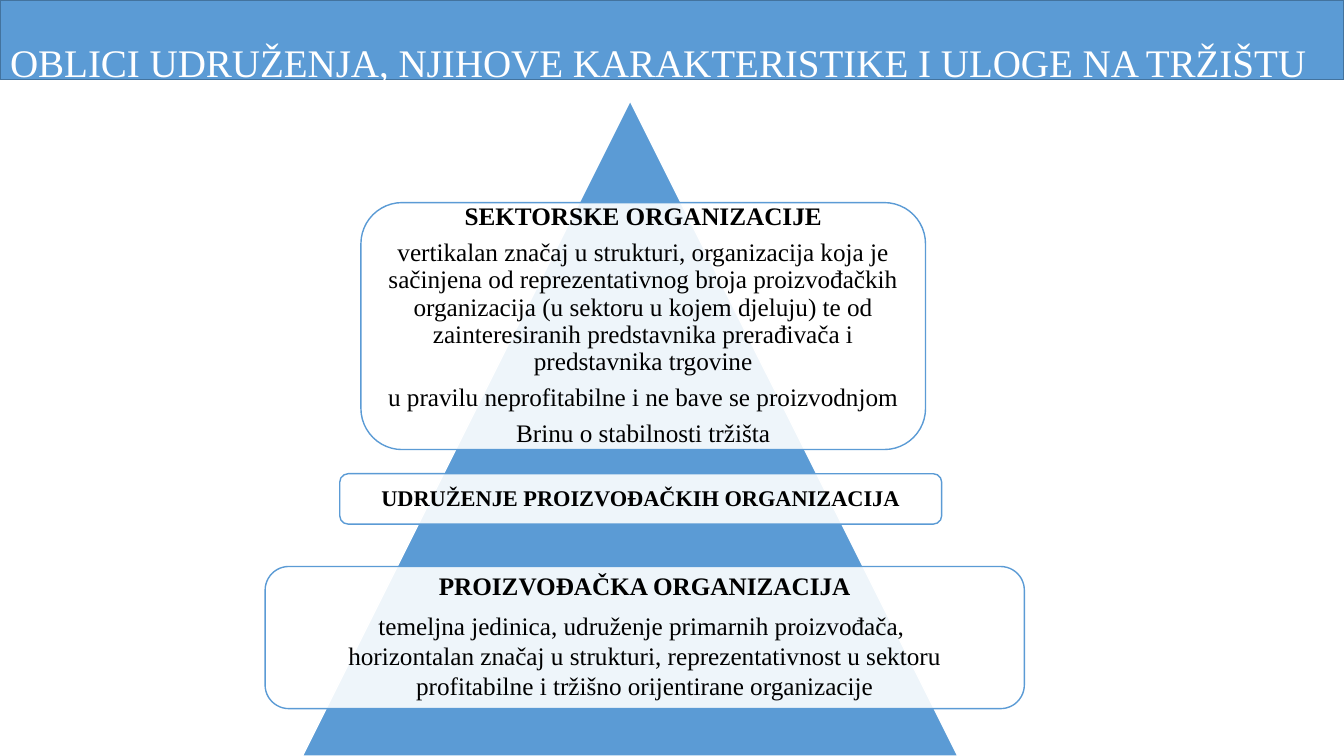
from dataclasses import dataclass

from lxml.etree import SubElement
from pptx import Presentation
from pptx.dml.color import RGBColor
from pptx.enum.shapes import MSO_SHAPE as Kind
from pptx.enum.text import MSO_ANCHOR as Anchor, MSO_AUTO_SIZE as Fit, PP_ALIGN as Align
from pptx.oxml.ns import qn
from pptx.shapes.autoshape import Shape
from pptx.slide import Slide
from pptx.util import Inches, Pt

BLUE = RGBColor(0x5B, 0x9B, 0xD5)
NAVY = RGBColor(0x43, 0x73, 0x9E)
WHITE = RGBColor(0xFF, 0xFF, 0xFF)
BLACK = RGBColor(0, 0, 0)
FONT = "Times New Roman"


@dataclass
class Level:
    left: float
    top: float
    width: float
    height: float
    size: float
    head: str
    body: tuple[str, ...] = ()
    tight: bool = True


LEVELS = (
    Level(3.37, 4.7, 5.97, 0.5, 16, "UDRUŽENJE PROIZVOĐAČKIH ORGANIZACIJA"),
    Level(2.63, 5.62, 7.53, 1.41, 18, "PROIZVOĐAČKA ORGANIZACIJA", (
        "temeljna jedinica, udruženje primarnih proizvođača, ",
        "horizontalan značaj u strukturi, reprezentativnost u sektoru",
        "profitabilne i tržišno orijentirane organizacije",
    ), tight=False),
    Level(3.58, 2.01, 5.6, 2.45, 18, "SEKTORSKE ORGANIZACIJE", (
        "vertikalan značaj u strukturi, organizacija koja je sačinjena od "
        "reprezentativnog broja proizvođačkih organizacija (u sektoru u kojem "
        "djeluju) te od zainteresiranih predstavnika prerađivača i "
        "predstavnika trgovine",
        "u pravilu neprofitabilne i ne bave se proizvodnjom",
        "Brinu o stabilnosti tržišta",
    )),
)


def paint(shape: Shape, fill: RGBColor, line: RGBColor) -> None:
    shape.fill.solid()
    shape.fill.fore_color.rgb = fill
    shape.line.color.rgb = line
    shape.line.width = Pt(1)


def add_title(slide: Slide) -> None:
    title = slide.shapes.title
    title.left, title.top = Inches(0), Inches(0)
    title.width, title.height = Inches(13.33), Inches(0.79)
    paint(title, BLUE, NAVY)
    frame = title.text_frame
    frame.text = "OBLICI UDRUŽENJA, NJIHOVE KARAKTERISTIKE I ULOGE NA TRŽIŠTU"
    frame.auto_size = Fit.NONE
    frame.word_wrap = True
    frame.vertical_anchor = Anchor.TOP
    frame.margin_top, frame.margin_bottom = Inches(0.43), Inches(0)
    para = frame.paragraphs[0]
    para.alignment = Align.LEFT
    para.line_spacing = 0.9
    para.font.size = Pt(27.9)
    para.font.name = FONT
    para.font.color.rgb = WHITE


def add_peak(slide: Slide) -> None:
    peak = slide.shapes.add_shape(
        Kind.ISOSCELES_TRIANGLE, Inches(3), Inches(1), Inches(6.5), Inches(6.5))
    peak.shadow.inherit = False
    paint(peak, BLUE, WHITE)


def add_level(slide: Slide, level: Level) -> None:
    box = slide.shapes.add_shape(
        Kind.ROUNDED_RECTANGLE, Inches(level.left), Inches(level.top),
        Inches(level.width), Inches(level.height))
    box.shadow.inherit = False
    paint(box, WHITE, BLUE)
    tint = box.fill._xPr.find(qn("a:solidFill"))[0]
    SubElement(tint, qn("a:alpha"), val="90000")
    frame = box.text_frame
    frame.word_wrap = True
    frame.vertical_anchor = Anchor.MIDDLE
    frame.margin_left = frame.margin_right = Inches(0.07)
    frame.margin_top = frame.margin_bottom = Inches(0.07)
    frame.text = "\n".join((level.head, *level.body))
    for row, para in enumerate(frame.paragraphs):
        para.alignment = Align.CENTER
        para.font.size = Pt(level.size)
        para.font.name = FONT
        para.font.bold = row == 0
        para.font.color.rgb = BLACK
        if row == 0 or level.tight:
            para.line_spacing = 0.9
            para.space_after = Pt(level.size * 0.35)


def main() -> None:
    deck = Presentation()
    deck.slide_width, deck.slide_height = Inches(13.33), Inches(7.5)
    slide = deck.slides.add_slide(deck.slide_layouts[5])
    add_title(slide)
    add_peak(slide)
    for level in LEVELS:
        add_level(slide, level)
    deck.save("out.pptx")


if __name__ == "__main__":
    main()
